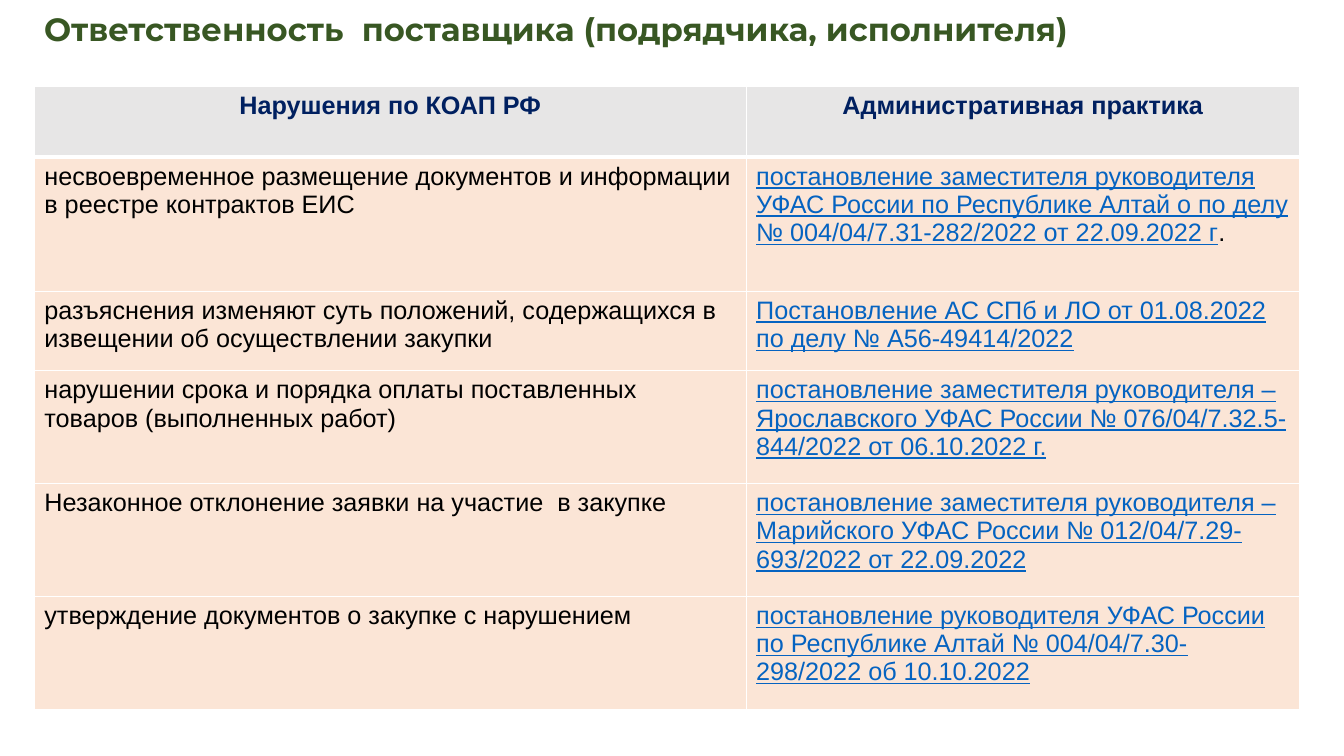
from lxml.etree import SubElement
from pptx import Presentation
from pptx.dml.color import RGBColor
from pptx.enum.text import PP_ALIGN
from pptx.oxml.ns import qn
from pptx.util import Inches, Pt

TITLE = "Ответственность  поставщика (подрядчика, исполнителя)"
HEADERS = ("Нарушения по КОАП РФ", "Административная практика")
CASES = [
    ("несвоевременное размещение документов и информации в реестре контрактов ЕИС",
     "постановление заместителя руководителя УФАС России по Республике Алтай о по делу "
     "№ 004/04/7.31-282/2022 от 22.09.2022 г", "."),
    ("разъяснения изменяют суть положений, содержащихся в извещении об осуществлении закупки",
     "Постановление АС СПб и ЛО от 01.08.2022 по делу № А56-49414/2022", ""),
    ("нарушении срока и порядка оплаты поставленных товаров (выполненных работ)",
     "постановление заместителя руководителя –Ярославского УФАС России "
     "№ 076/04/7.32.5-844/2022 от 06.10.2022 г.", ""),
    ("Незаконное отклонение заявки на участие  в закупке",
     "постановление заместителя руководителя –Марийского УФАС России "
     "№ 012/04/7.29-693/2022 от 22.09.2022", ""),
    ("утверждение документов о закупке с нарушением",
     "постановление руководителя УФАС России по Республике Алтай "
     "№ 004/04/7.30-298/2022 об 10.10.2022", ""),
]
COLORS = {"title": "385723", "header": "002060", "text": "000000", "decision": "0563C1",
          "header_fill": "E7E6E6", "case_fill": "FBE5D6", "border": "FFFFFF"}
SLIDE_WIDTH, SLIDE_HEIGHT = 13.33, 7.5
LEFT, TITLE_TOP, TABLE_TOP = 0.34, 0.04, 0.86
TITLE_WIDTH, TITLE_HEIGHT = 12.67, 0.49
COLUMN_WIDTHS = (7.06, 5.49)
ROW_HEIGHTS = (0.7, 1.33, 0.79, 1.12, 1.12, 1.12)


def add_run(paragraph, text, color, size=18, font="Arial", bold=False, underline=False):
    run = paragraph.add_run()
    run.text = text
    run.font.name = font
    run.font.size = Pt(size)
    run.font.bold = bold
    run.font.underline = underline
    run.font.color.rgb = RGBColor.from_string(COLORS[color])


def style_cell(cell, fill, bottom_width=1):
    properties = cell._tc.get_or_add_tcPr()
    for side, width in (("L", 1), ("R", 1), ("T", 1), ("B", bottom_width)):
        line = SubElement(properties, qn(f"a:ln{side}"), w=str(Pt(width)))
        solid = SubElement(line, qn("a:solidFill"))
        SubElement(solid, qn("a:srgbClr"), val=COLORS["border"])
    cell.fill.solid()
    cell.fill.fore_color.rgb = RGBColor.from_string(COLORS[fill])


def add_title(slide):
    box = slide.shapes.add_textbox(Inches(LEFT), Inches(TITLE_TOP),
                                   Inches(TITLE_WIDTH), Inches(TITLE_HEIGHT))
    box.text_frame.word_wrap = True
    add_run(box.text_frame.paragraphs[0], TITLE, "title", 23, "Montserrat", True)


def add_case_table(slide):
    table = slide.shapes.add_table(
        len(ROW_HEIGHTS), len(COLUMN_WIDTHS), Inches(LEFT), Inches(TABLE_TOP),
        Inches(sum(COLUMN_WIDTHS)), Inches(sum(ROW_HEIGHTS))).table
    table.horz_banding = False
    for column, width in zip(table.columns, COLUMN_WIDTHS):
        column.width = Inches(width)
    for row, height in zip(table.rows, ROW_HEIGHTS):
        row.height = Inches(height)
    for cell, header in zip(table.rows[0].cells, HEADERS):
        style_cell(cell, "header_fill", 3)
        paragraph = cell.text_frame.paragraphs[0]
        paragraph.alignment = PP_ALIGN.CENTER
        add_run(paragraph, header, "header", bold=True)
    for row_number, (violation, decision, ending) in enumerate(CASES, 1):
        violation_cell, decision_cell = table.rows[row_number].cells
        style_cell(violation_cell, "case_fill")
        style_cell(decision_cell, "case_fill")
        add_run(violation_cell.text_frame.paragraphs[0], violation, "text")
        paragraph = decision_cell.text_frame.paragraphs[0]
        add_run(paragraph, decision, "decision", underline=True)
        if ending:
            add_run(paragraph, ending, "text")


def main():
    presentation = Presentation()
    presentation.slide_width = Inches(SLIDE_WIDTH)
    presentation.slide_height = Inches(SLIDE_HEIGHT)
    slide = presentation.slides.add_slide(presentation.slide_layouts[6])
    add_title(slide)
    add_case_table(slide)
    presentation.save("out.pptx")


if __name__ == "__main__":
    main()
